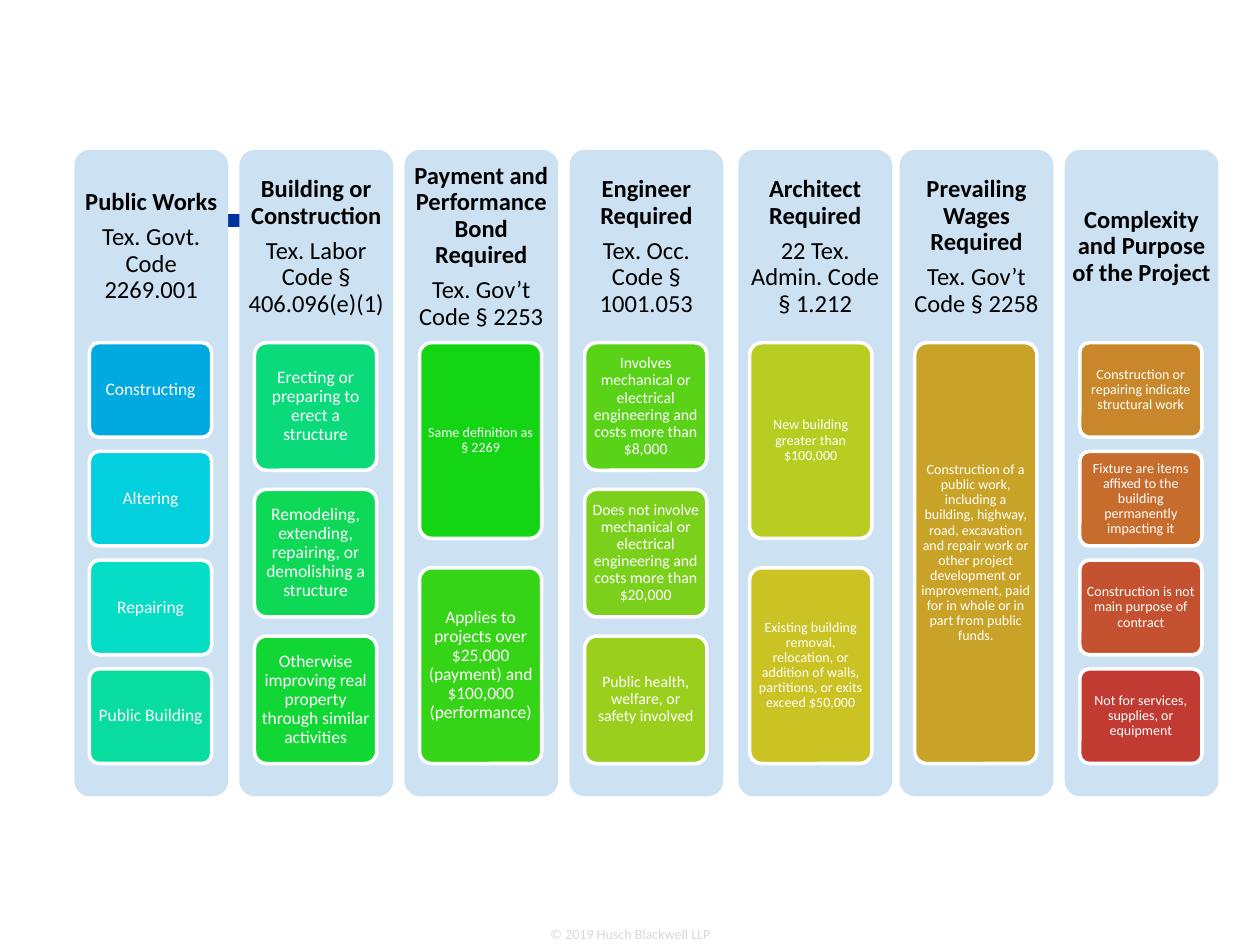
"""Build a slide comparing seven legal definitions as columns of cards."""
import pptx
import pptx.dml.color
import pptx.enum.shapes
import pptx.enum.text
import pptx.util
from lxml import etree

FONT = "Calibri"
COLUMNS = [
    ("Public Works", "Tex. Govt. Code 2269.001", [
        ("Constructing", 10, "00A9E0"),
        ("Altering", 10, "03D0DF"),
        ("Repairing", 10, "05DDC6"),
        ("Public Building", 10, "08DC9F")]),
    ("Building or Construction", "Tex. Labor Code § 406.096(e)(1)", [
        ("Erecting or preparing to erect a structure", 10, "0BDA7A"),
        ("Remodeling, extending, repairing, or demolishing a structure", 10, "0DD956"),
        ("Otherwise improving real property through similar activities", 10, "10D734")]),
    ("Payment and Performance Bond Required", "Tex. Gov’t Code § 2253", [
        ("Same definition as § 2269", 8, "13D514"),
        ("Applies to projects over $25,000 (payment) and $100,000 (performance)", 10, "36D416")]),
    ("Engineer Required", "Tex. Occ. Code § 1001.053", [
        ("Involves mechanical or electrical engineering and costs more than $8,000", 9, "59D218"),
        ("Does not involve mechanical or electrical engineering and costs more than $20,000",
         9, "7BD01B"),
        ("Public health, welfare, or safety involved", 9, "9ACF1E")]),
    ("Architect Required", "22 Tex. Admin. Code § 1.212", [
        ("New building greater than $100,000", 8, "B8CD21"),
        ("Existing building removal, relocation, or addition of walls, partitions, "
         "or exits exceed $50,000", 8, "CBC224")]),
    ("Prevailing Wages Required", "Tex. Gov’t Code § 2258", [
        ("Construction of a public work, including a building, highway, road, excavation "
         "and repair work or other project development or improvement, paid for in whole "
         "or in part from public funds.", 8, "C9A327")]),
    ("Complexity and Purpose of the Project", None, [
        ("Construction or repairing indicate structural work", 8, "C8872A"),
        ("Fixture are items affixed to the building permanently impacting it", 8, "C66C2D"),
        ("Construction is not main purpose of contract", 8, "C45230"),
        ("Not for services, supplies, or equipment", 8, "C23B33")]),
]
PANEL_LEFT, PANEL_TOP, PANEL_WIDTH, PANEL_HEIGHT = 0.59, 1.19, 1.22, 5.13
PITCH = 1.31
PANEL_SHIFT = {4: 0.03}
HEADER_SHARE = 0.3
CARD_INSET, CARD_TOP, CARD_WIDTH, CARDS_HEIGHT = 0.12, 2.72, 0.97, 3.34
GAP_SHARE = 0.15


def color(value):
    return pptx.dml.color.RGBColor.from_string(value)


def inches(*values):
    return [pptx.util.Inches(value) for value in values]


def write(shape, lines, size, hue, side, edge, spacing=0.9):
    """Fill a shape with centred lines given as (text, bold) pairs."""
    frame = shape.text_frame
    frame.word_wrap = True
    frame.vertical_anchor = pptx.enum.text.MSO_ANCHOR.MIDDLE
    frame.margin_left = frame.margin_right = pptx.util.Pt(side)
    frame.margin_top = frame.margin_bottom = pptx.util.Pt(edge)
    frame.text = "\n".join(text for text, bold in lines)
    for paragraph, (text, bold) in zip(frame.paragraphs, lines):
        paragraph.alignment = pptx.enum.text.PP_ALIGN.CENTER
        paragraph.line_spacing = spacing
        paragraph.space_after = pptx.util.Pt(0.35 * size)
        font = paragraph.runs[0].font
        font.name, font.size, font.bold = FONT, pptx.util.Pt(size), bold
        font.color.rgb = color(hue)


def add_box(slide, box, fill, line=None):
    shape = slide.shapes.add_shape(
        pptx.enum.shapes.MSO_SHAPE.ROUNDED_RECTANGLE, *inches(*box))
    shape.adjustments[0] = 0.1
    shape.shadow.inherit = False
    shape.fill.solid()
    shape.fill.fore_color.rgb = color(fill)
    if line:
        shape.line.color.rgb = color(line)
        shape.line.width = pptx.util.Pt(2)
    else:
        shape.line.fill.background()
    return shape


def add_column(slide, index, title, statute, cards):
    grid_left = PANEL_LEFT + index * PITCH
    left = grid_left + PANEL_SHIFT.get(index, 0)
    add_box(slide, (left, PANEL_TOP, PANEL_WIDTH, PANEL_HEIGHT), "CCE2F3")
    header = slide.shapes.add_textbox(
        *inches(left, PANEL_TOP, PANEL_WIDTH, PANEL_HEIGHT * HEADER_SHARE))
    lines = [(title, True)] + ([(statute, False)] if statute else [])
    write(header, lines, 14, "000000", 4.2, 4.2)

    height = CARDS_HEIGHT / (len(cards) + GAP_SHARE * (len(cards) - 1))
    for row, (text, size, fill) in enumerate(cards):
        top = CARD_TOP + row * height * (1 + GAP_SHARE)
        card = add_box(slide, (grid_left + CARD_INSET, top, CARD_WIDTH, height), fill, "FFFFFF")
        write(card, [(text, False)], size, "FFFFFF", 0.2 * size, 0.15 * size)


def main():
    presentation = pptx.Presentation()
    presentation.slide_width, presentation.slide_height = inches(10, 7.5)
    slide = presentation.slides.add_slide(presentation.slide_layouts[6])

    footer = slide.shapes.add_textbox(*inches(4.17, 7.33, 1.67, 0.17))
    write(footer, [("© 2019 Husch Blackwell LLP", False)], 8, "D9D9D9", 3, 1.5, 1.0)

    accent = slide.shapes.add_connector(
        pptx.enum.shapes.MSO_CONNECTOR.STRAIGHT, *inches(1.77, 1.75, 2.37, 1.75))
    accent.line.color.rgb = color("0033A0")
    accent.line.width = pptx.util.Pt(7)
    properties = accent.element.spPr
    etree.SubElement(properties, pptx.oxml.ns.qn("a:effectLst"))

    for index, column in enumerate(COLUMNS):
        add_column(slide, index, *column)
    presentation.save("out.pptx")


if __name__ == "__main__":
    main()
